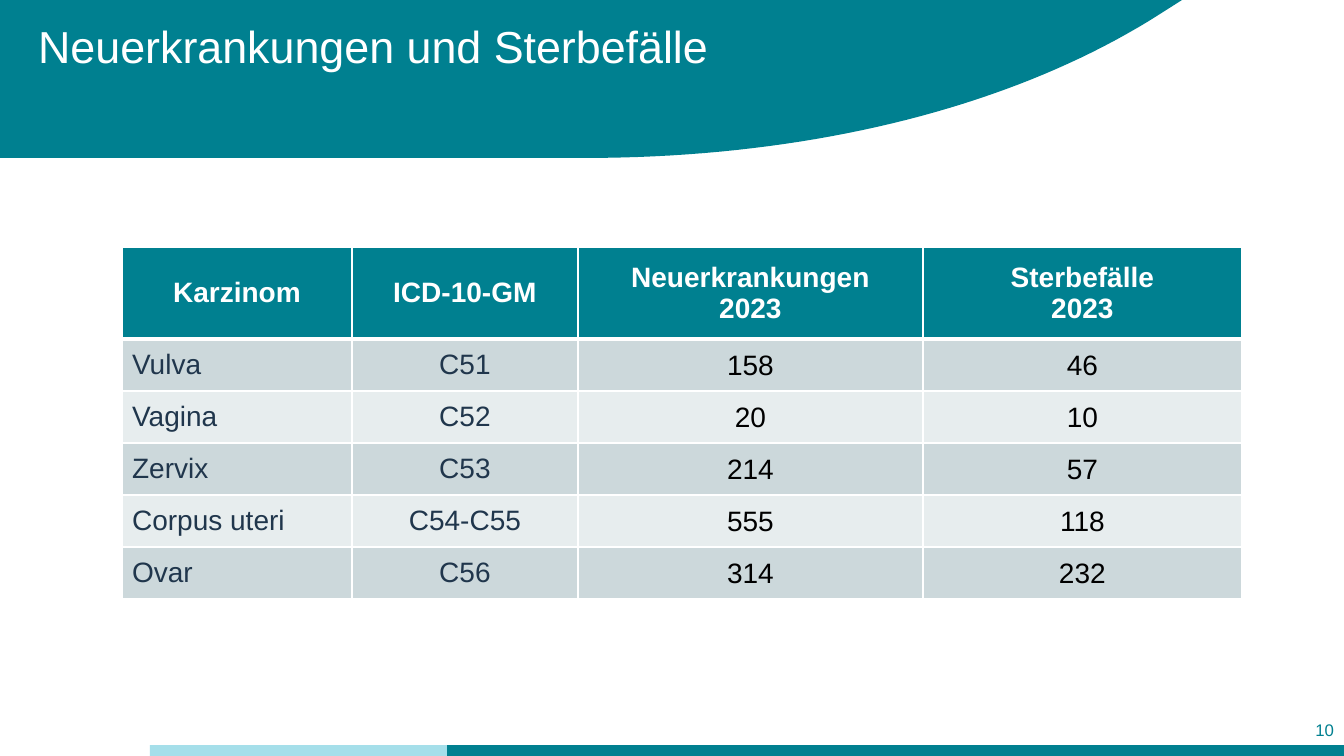
from lxml import etree
from pptx import Presentation
from pptx.dml.color import RGBColor
from pptx.enum.shapes import MSO_SHAPE
from pptx.enum.text import MSO_ANCHOR, MSO_AUTO_SIZE, PP_ALIGN
from pptx.oxml.ns import qn
from pptx.util import Pt

PX = 914400 / 100.8
LEFT, CENTER, RIGHT = PP_ALIGN.LEFT, PP_ALIGN.CENTER, PP_ALIGN.RIGHT
TOP, MIDDLE = MSO_ANCHOR.TOP, MSO_ANCHOR.MIDDLE
NO_AUTOFIT = MSO_AUTO_SIZE.NONE
RECTANGLE = MSO_SHAPE.RECTANGLE

COLORS = {
    "teal": "008090",
    "aqua": "A5DFEA",
    "white": "FFFFFF",
    "navy": "20364C",
    "black": "000000",
    "band_dark": "CCD8DB",
    "band_light": "E7EDEE",
}

HEADINGS = ["Karzinom", "ICD-10-GM", "Neuerkrankungen\n2023", "Sterbefälle\n2023"]
CASES = [
    ["Vulva", "C51", "158", "46"],
    ["Vagina", "C52", "20", "10"],
    ["Zervix", "C53", "214", "57"],
    ["Corpus uteri", "C54-C55", "555", "118"],
    ["Ovar", "C56", "314", "232"],
]
COLUMN_WIDTHS = [230, 226, 345, 319]
HEADING_HEIGHT, CASE_HEIGHT = 92, 52


def emu(*lengths):
    return [round(length * PX) for length in lengths]


def rgb(name):
    return RGBColor.from_string(COLORS[name])


def set_all(target, values):
    for attribute, value in values.items():
        setattr(target, attribute, value)


def paint(shape, color):
    shape.shadow.inherit = False
    shape.fill.solid()
    shape.fill.fore_color.rgb = rgb(color)
    shape.line.fill.background()


def write(frame, text, size, color, align, bold=False, spacing=None):
    frame.text = text
    for paragraph in frame.paragraphs:
        set_all(paragraph, {"alignment": align, "line_spacing": spacing})
        set_all(paragraph.font, {"name": "Arial", "size": Pt(size), "bold": bold})
        paragraph.font.color.rgb = rgb(color)


def add_header(slide, left, top, width, height):
    """Draw the band whose right end sweeps down to the left in a Bézier curve."""
    controls = [(width - 22, 14), (width - 163, 104), (width - 364, height), (width - 598, height)]
    outline = [(width, 0)]
    steps = 40
    for step in range(steps + 1):
        t = step / steps
        weights = [(1 - t) ** 3, 3 * t * (1 - t) ** 2, 3 * t ** 2 * (1 - t), t ** 3]
        outline.append(tuple(sum(w * point[axis] for w, point in zip(weights, controls))
                             for axis in (0, 1)))
    outline.append((0, height))
    builder = slide.shapes.build_freeform(*emu(left, top))
    builder.add_line_segments([emu(left + x, top + y) for x, y in outline])
    paint(builder.convert_to_shape(), "teal")


def place_title(slide, left, top, width, height):
    title = slide.shapes.title
    set_all(title, dict(zip(("left", "top", "width", "height"), emu(left, top, width, height))))
    set_all(title.text_frame, {"vertical_anchor": TOP, "word_wrap": True, "auto_size": NO_AUTOFIT})
    write(title.text_frame, "Neuerkrankungen und Sterbefälle", 32, "white", LEFT, spacing=0.9)
    slide.shapes.element.append(title.element)  # bring in front of the header


def add_footer(slide, left, top, width, height):
    aqua_width = 297
    for color, x, bar_width in (("teal", left + aqua_width, width - aqua_width),
                                ("aqua", left, aqua_width)):
        paint(slide.shapes.add_shape(RECTANGLE, *emu(x, top, bar_width, height)), color)
    number_width, number_height = 75, 40
    number = slide.shapes.add_textbox(
        *emu(left + width - number_width, top - 35, number_width, number_height))
    set_all(number.text_frame, {"vertical_anchor": MIDDLE, "word_wrap": True})
    write(number.text_frame, "10", 12, "teal", RIGHT)


def add_borders(cell, top_width, bottom_width):
    properties = cell._tc.get_or_add_tcPr()
    for side, points in (("L", 1), ("R", 1), ("T", top_width), ("B", bottom_width)):
        line = etree.SubElement(properties, qn(f"a:ln{side}"), w=str(Pt(points)))
        fill = etree.SubElement(line, qn("a:solidFill"))
        etree.SubElement(fill, qn("a:srgbClr"), val=COLORS["white"])


def format_cell(cell, text, row, column):
    heading, count = row == 0, column > 1
    add_borders(cell, 3 if row == 1 else 1, 3 if heading else 1)
    cell.fill.solid()
    band = "band_dark" if row % 2 else "band_light"
    cell.fill.fore_color.rgb = rgb("teal" if heading else band)
    cell.vertical_anchor = MIDDLE
    if count and not heading:
        margin = emu(1)[0]
        set_all(cell, {"margin_left": margin, "margin_right": margin,
                       "margin_top": margin, "margin_bottom": 0})
    color = "white" if heading else "black" if count else "navy"
    align = CENTER if heading or column else LEFT
    write(cell.text_frame, text, 20, color, align, bold=heading)


def add_case_table(slide, left, top):
    rows = [HEADINGS] + CASES
    heights = [HEADING_HEIGHT] + [CASE_HEIGHT] * len(CASES)
    table = slide.shapes.add_table(
        len(rows), len(HEADINGS), *emu(left, top, sum(COLUMN_WIDTHS), sum(heights))).table
    table.horz_banding = False
    for column, width in zip(table.columns, emu(*COLUMN_WIDTHS)):
        column.width = width
    for row, height in zip(table.rows, emu(*heights)):
        row.height = height
    for r, texts in enumerate(rows):
        for c, text in enumerate(texts):
            format_cell(table.cell(r, c), text, r, c)


def main():
    presentation = Presentation()
    presentation.slide_width, presentation.slide_height = emu(1344, 756)
    slide = presentation.slides.add_slide(presentation.slide_layouts[5])
    add_header(slide, 0, 0, 1182, 158)
    add_footer(slide, 150, 745, 1194, 11)
    place_title(slide, 28, 20, 720, 119)
    add_case_table(slide, 122, 247)
    presentation.save("out.pptx")


if __name__ == "__main__":
    main()
